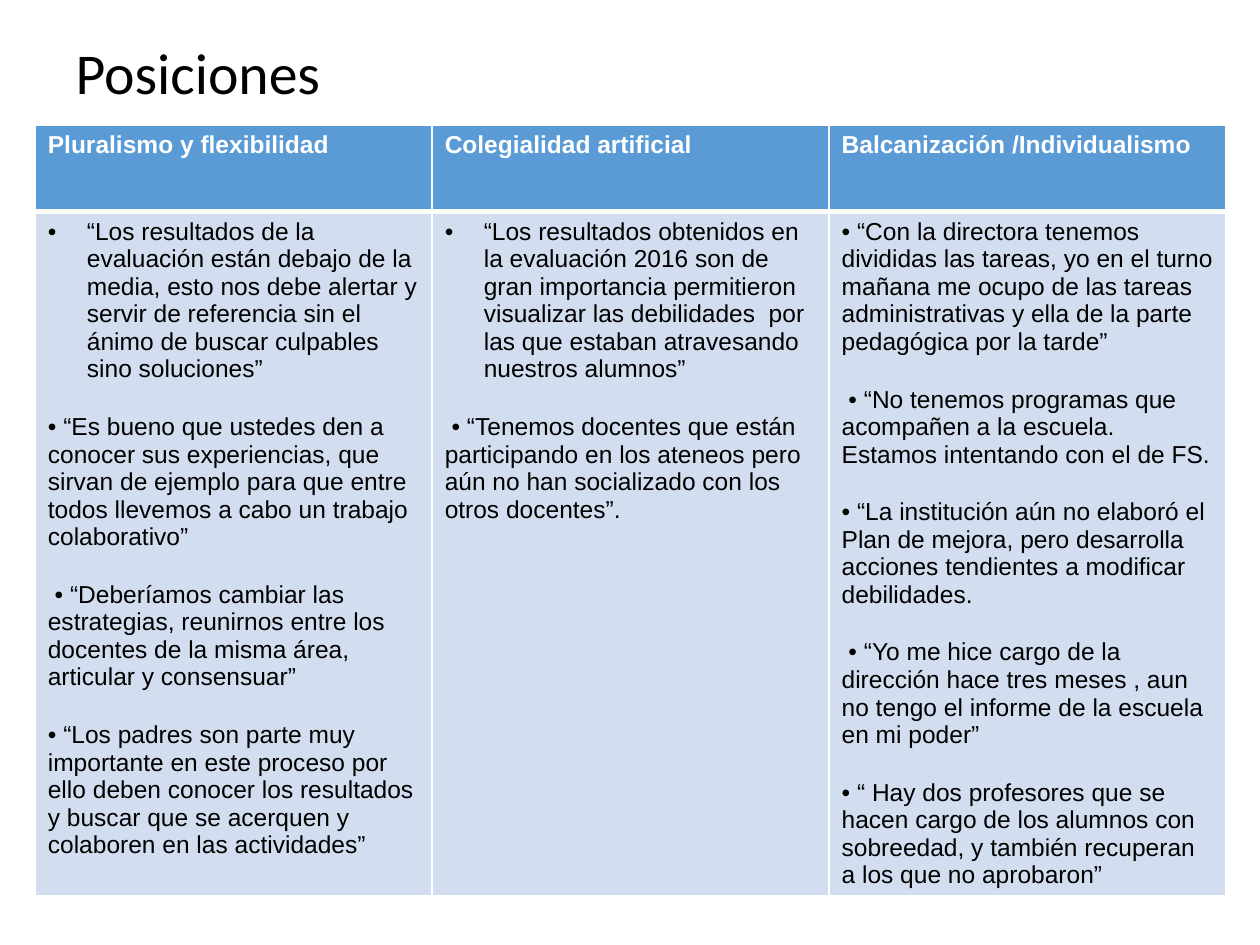
from lxml.etree import SubElement
from pptx import Presentation
from pptx.dml.color import RGBColor
from pptx.enum.text import MSO_ANCHOR, PP_ALIGN
from pptx.oxml.ns import qn
from pptx.util import Inches, Pt

# Content: heading, whether its first quote hangs from a bullet, quotes
TITLE = "Posiciones"
POSITIONS = [
    ("Pluralismo y flexibilidad", True, [
        "“Los resultados de la evaluación están debajo de la media, esto nos debe alertar y servir "
        "de referencia sin el ánimo de buscar culpables sino soluciones”",
        "• “Es bueno que ustedes den a conocer sus experiencias, que sirvan de ejemplo para que "
        "entre todos llevemos a cabo un trabajo colaborativo”",
        " • “Deberíamos cambiar las estrategias, reunirnos entre los docentes de la misma área, "
        "articular y consensuar”",
        "• “Los padres son parte muy importante en este proceso por ello deben conocer los "
        "resultados y buscar que se acerquen y colaboren en las actividades”",
    ]),
    ("Colegialidad artificial", True, [
        "“Los resultados obtenidos en la evaluación 2016 son de gran importancia permitieron "
        "visualizar las debilidades  por las que estaban atravesando nuestros alumnos”",
        " • “Tenemos docentes que están participando en los ateneos pero aún no han socializado "
        "con los otros docentes”.",
    ]),
    ("Balcanización /Individualismo", False, [
        "• “Con la directora tenemos divididas las tareas, yo en el turno mañana me ocupo de las "
        "tareas administrativas y ella de la parte pedagógica por la tarde”",
        " • “No tenemos programas que acompañen a la escuela. Estamos intentando con el de FS.",
        "• “La institución aún no elaboró el Plan de mejora, pero desarrolla acciones tendientes "
        "a modificar  debilidades.",
        " • “Yo me hice cargo de la dirección hace tres meses , aun no tengo el informe de la "
        "escuela en mi poder”",
        "• “ Hay dos profesores que se hacen cargo de los alumnos con sobreedad, y también "
        "recuperan a los que no aprobaron”",
    ]),
]

# Formats
TITLE_FONT = {"name": "Calibri", "size": Pt(33), "bold": False}
HEADING_FONT = {"name": "Arial", "size": Pt(14), "bold": True}
QUOTE_FONT = {"name": "Arial", "size": Pt(14), "bold": False}
WHITE, BLACK, BLUE, PALE_BLUE = "FFFFFF", "000000", "5B9BD5", "D2DEEF"
QUOTE_GAP = Pt(17.2)
HANGING = Inches(0.31)
COLUMN_WIDTH = Inches(3.15)
ROW_HEIGHTS = [Inches(0.69), Inches(5.38)]


def rgb(value):
    return RGBColor.from_string(value)


def set_font(font, formats, color):
    for attribute, value in formats.items():
        setattr(font, attribute, value)
    font.color.rgb = rgb(color)


def write(paragraph, text, formats, color):
    run = paragraph.add_run()
    run.text = text
    set_font(run.font, formats, color)


def set_borders(cell, top, bottom):
    properties = cell._tc.get_or_add_tcPr()
    for side, points in (("L", 1), ("R", 1), ("T", top), ("B", bottom)):
        line = SubElement(properties, qn(f"a:ln{side}"), w=str(Pt(points)))
        SubElement(SubElement(line, qn("a:solidFill")), qn("a:srgbClr"), val=WHITE)


def style_cell(cell, fill, top, bottom):
    set_borders(cell, top, bottom)
    cell.fill.solid()
    cell.fill.fore_color.rgb = rgb(fill)


def hang_bullet(paragraph):
    properties = paragraph._p.get_or_add_pPr()
    properties.set("marL", str(HANGING))
    properties.set("indent", str(-HANGING))
    SubElement(properties, qn("a:buFont"), typeface="Arial")
    SubElement(properties, qn("a:buChar"), char="•")


presentation = Presentation()
presentation.slide_width, presentation.slide_height = Inches(10), Inches(7.5)
slide = presentation.slides.add_slide(presentation.slide_layouts[5])

# Title
title = slide.shapes.title
title.left, title.top, title.width, title.height = map(Inches, (0.5, 0.3, 9, 0.61))
title.text_frame.vertical_anchor = MSO_ANCHOR.MIDDLE
heading_line = title.text_frame.paragraphs[0]
heading_line.alignment = PP_ALIGN.LEFT
heading_line.line_spacing = 0.9
write(heading_line, TITLE, TITLE_FONT, BLACK)

# Table of positions
table = slide.shapes.add_table(
    len(ROW_HEIGHTS), len(POSITIONS), Inches(0.28), Inches(0.99),
    COLUMN_WIDTH * len(POSITIONS), sum(ROW_HEIGHTS)).table
for row, height in zip(table.rows, ROW_HEIGHTS):
    row.height = height

for column, (heading, bulleted, quotes) in enumerate(POSITIONS):
    table.columns[column].width = COLUMN_WIDTH
    heading_cell, quotes_cell = table.cell(0, column), table.cell(1, column)
    style_cell(heading_cell, BLUE, top=1, bottom=3)
    style_cell(quotes_cell, PALE_BLUE, top=3, bottom=1)
    write(heading_cell.text_frame.paragraphs[0], heading, HEADING_FONT, WHITE)

    frame = quotes_cell.text_frame
    for index, quote in enumerate(quotes):
        paragraph = frame.add_paragraph() if index else frame.paragraphs[0]
        if index:
            paragraph.space_before = QUOTE_GAP
        elif bulleted:
            hang_bullet(paragraph)
        write(paragraph, quote, QUOTE_FONT, BLACK)

presentation.save("out.pptx")
